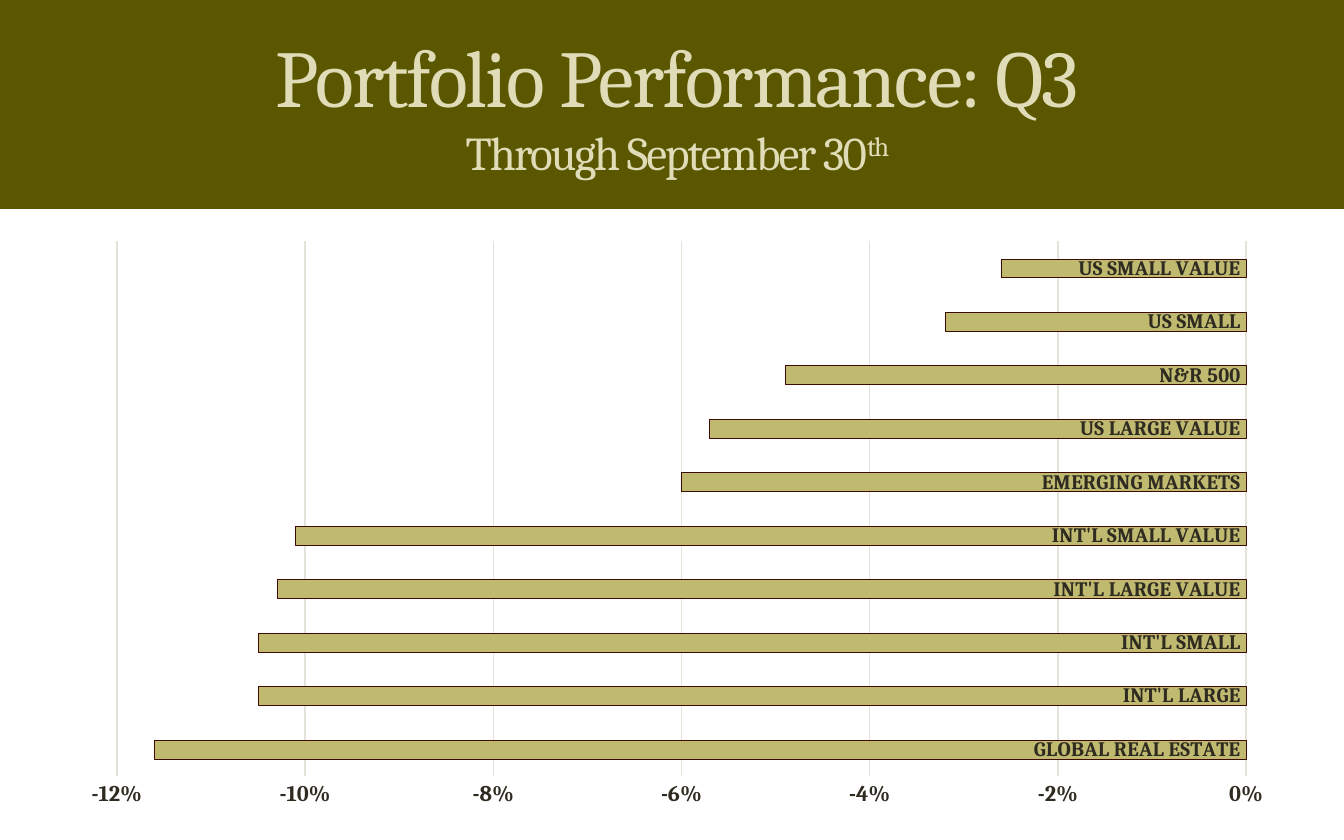
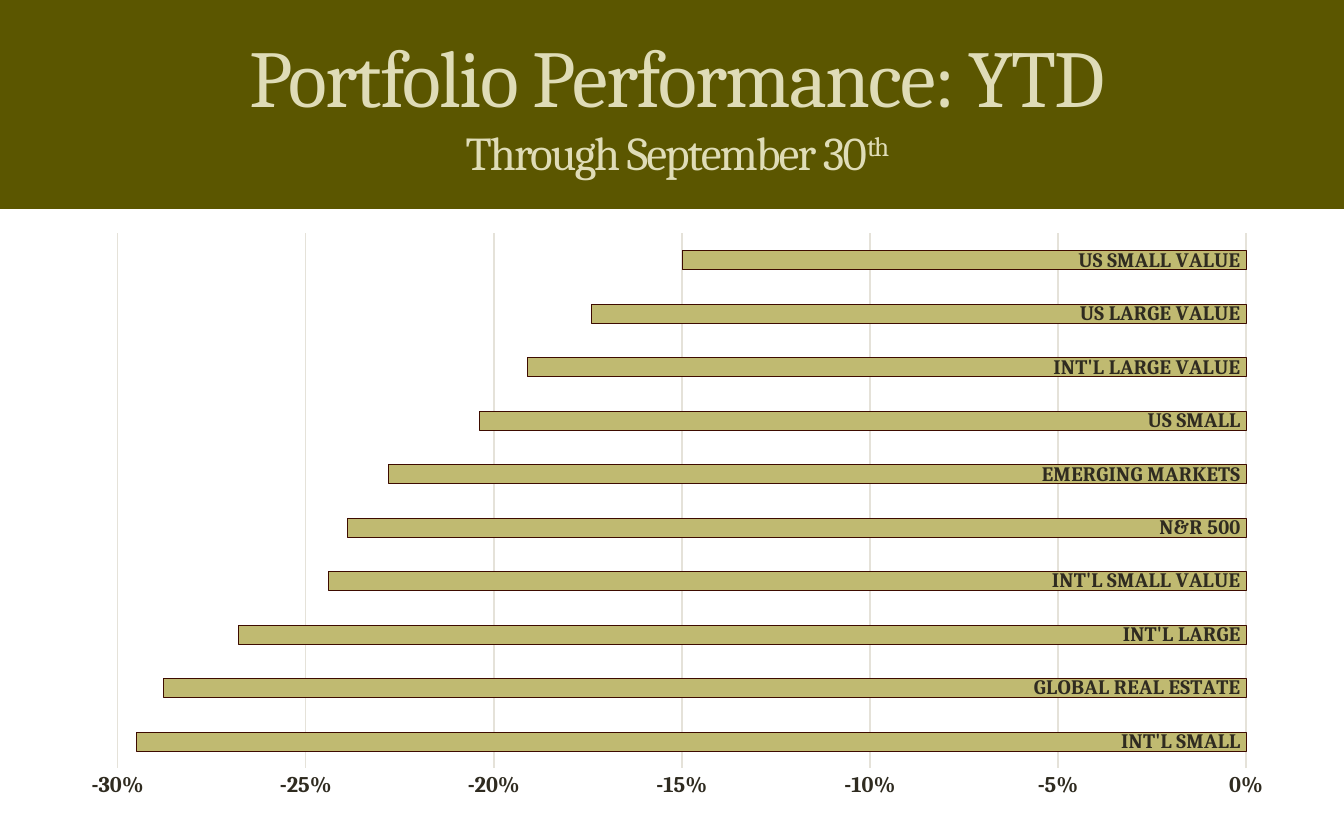
from pptx import Presentation
from pptx import util as u
from pptx.chart import data as chart_data
from pptx.dml import color
from pptx.enum import chart as charts, shapes, text

OLIVE, CREAM, SAGE = "5B5600", "DFDCB7", "C0BA71"
INK, GRID, MAROON = "2F2B20", "E5E2D9", "3D0B00"


def paint(target, value):
    target.rgb = color.RGBColor.from_string(value)


class Deck:
    font_name = "Cambria"
    columns = rows = 100

    def __init__(self):
        self.presentation = Presentation()
        self.presentation.slide_width = u.Inches(10)
        self.presentation.slide_height = u.Inches(6.25)
        self.slide = None

    def box(self, left, top, width, height):
        column = self.presentation.slide_width / self.columns
        row = self.presentation.slide_height / self.rows
        return [round(length) for length in
                (left * column, top * row, width * column, height * row)]

    def style(self, font, size, value, bold=None):
        font.name = self.font_name
        font.size = u.Pt(size)
        font.bold = bold
        paint(font.color, value)

    def outline(self, line, value, width):
        line.fill.solid()
        paint(line.fill.fore_color, value)
        line.width = u.Pt(width)

    def add_slide(self):
        self.slide = self.presentation.slides.add_slide(self.presentation.slide_layouts[5])

    def add_band(self):
        band = self.slide.shapes.add_shape(shapes.MSO_SHAPE.RECTANGLE, *self.box(0, 0, 100, 24.64))
        band.shadow.inherit = False
        band.fill.solid()
        paint(band.fill.fore_color, OLIVE)
        self.outline(band.line, OLIVE, 2)
        self.slide.shapes._spTree.insert(2, band._element)

    def add_run(self, paragraph, words, size, baseline=None):
        run = paragraph.add_run()
        run.text = words
        self.style(run.font, size, CREAM)
        properties = run._r.get_or_add_rPr()
        properties.set("spc", "-100")
        if baseline:
            properties.set("baseline", str(baseline * 1000))

    def add_title(self, heading):
        title = self.slide.shapes.title
        title.left, title.top, title.width, title.height = self.box(5, 4, 90.8, 16.64)
        frame = title.text_frame
        frame.word_wrap = True
        frame.auto_size = text.MSO_AUTO_SIZE.NONE
        frame.vertical_anchor = text.MSO_ANCHOR.MIDDLE
        paragraph = frame.paragraphs[0]
        paragraph.alignment = text.PP_ALIGN.CENTER
        self.add_run(paragraph, heading, 43.2)
        paragraph.add_line_break()
        self.add_run(paragraph, "Through September 30", 25.2)
        self.add_run(paragraph, "th", 25.2, baseline=30)

    def style_axis(self, axis, size):
        axis.major_tick_mark = axis.minor_tick_mark = charts.XL_TICK_MARK.NONE
        axis.tick_label_position = charts.XL_TICK_LABEL_POSITION.NEXT_TO_AXIS
        self.style(axis.tick_labels.font, size, INK, bold=True)

    def add_bar_chart(self, returns, top, minimum, step):
        data = chart_data.CategoryChartData(number_format="0.0%")
        data.categories = list(returns)
        data.add_series("Series 1", [round(value / 100, 3) for value in returns.values()])
        chart = self.slide.shapes.add_chart(
            charts.XL_CHART_TYPE.BAR_CLUSTERED, *self.box(5, top, 90.8, 70.08), data).chart
        chart.has_legend = chart.has_title = False
        self.style(chart.font, 10, INK)

        plot = chart.plots[0]
        plot.gap_width = 182
        plot.vary_by_categories = False
        series = plot.series[0]
        series.invert_if_negative = False
        series.format.fill.solid()
        paint(series.format.fill.fore_color, SAGE)
        self.outline(series.format.line, MAROON, 0.25)

        self.style_axis(chart.category_axis, 11)
        self.outline(chart.category_axis.format.line, GRID, 0.75)

        values = chart.value_axis
        self.style_axis(values, 12)
        values.minimum_scale, values.maximum_scale, values.major_unit = minimum, 0, step
        values.tick_labels.number_format = "0%"
        values.tick_labels.number_format_is_linked = False
        values.format.line.fill.background()
        values.has_major_gridlines = True
        self.outline(values.major_gridlines.format.line, GRID, 0.75)

    def add_performance(self, period, returns, top, minimum, step):
        self.add_slide()
        self.add_band()
        self.add_title(f"Portfolio Performance: {period}")
        self.add_bar_chart(returns, top, minimum, step)


QUARTER = {
    "GLOBAL REAL ESTATE": -11.6,
    "INT'L LARGE": -10.5,
    "INT'L SMALL": -10.5,
    "INT'L LARGE VALUE": -10.3,
    "INT'L SMALL VALUE": -10.1,
    "EMERGING MARKETS": -6.0,
    "US LARGE VALUE": -5.7,
    "N&R 500": -4.9,
    "US SMALL": -3.2,
    "US SMALL VALUE": -2.6,
}
YEAR_TO_DATE = {
    "INT'L SMALL": -29.5,
    "GLOBAL REAL ESTATE": -28.8,
    "INT'L LARGE": -26.8,
    "INT'L SMALL VALUE": -24.4,
    "N&R 500": -23.9,
    "EMERGING MARKETS": -22.8,
    "US SMALL": -20.4,
    "INT'L LARGE VALUE": -19.1,
    "US LARGE VALUE": -17.4,
    "US SMALL VALUE": -15.0,
}


def main():
    deck = Deck()
    deck.add_performance("Q3", QUARTER, top=27.36, minimum=-0.12, step=0.02)
    deck.add_performance("YTD", YEAR_TO_DATE, top=26.4, minimum=-0.3, step=0.05)
    deck.presentation.save("out.pptx")


if __name__ == "__main__":
    main()
